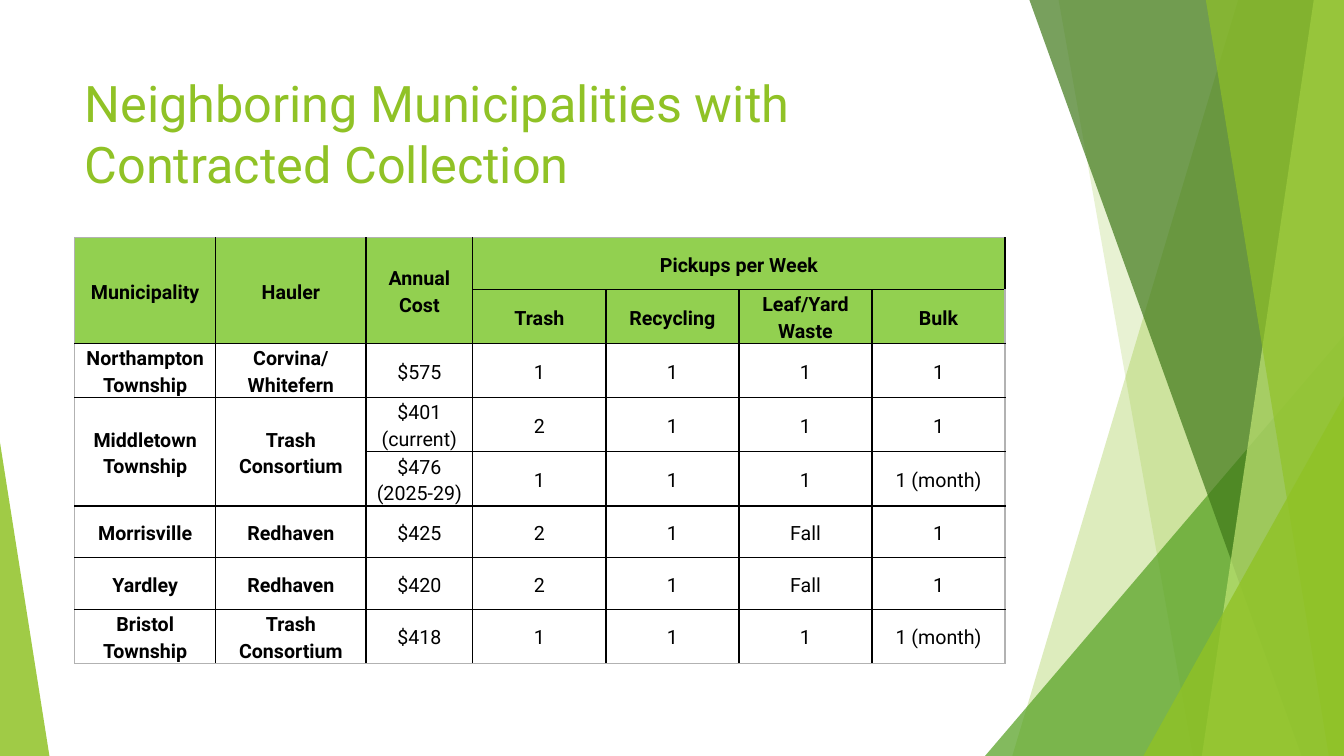
from lxml.etree import SubElement
from pptx import Presentation
from pptx.dml.color import RGBColor
from pptx.enum.shapes import MSO_SHAPE
from pptx.enum.text import MSO_ANCHOR, PP_ALIGN
from pptx.oxml.ns import qn
from pptx.util import Inches, Pt

THEME = {
    "font": "Roboto", "title_size": 36, "table_size": 14,
    "lime": "90C226", "leaf": "54A021", "forest": "3F7819", "pale": "C0E474",
    "header": "92D050", "text": "000000", "rule": "000000", "frame": "B2B2B2",
}

WIDTH, HEIGHT = 13.33, 7.5

# Content
TITLE = "Neighboring Municipalities with Contracted Collection"
HEADER_ROWS = 2
NAME_COLUMNS = 2
COLUMN_WIDTHS = [1.4, 1.49, 1.06] + [1.32] * 4
TABLE_LEFT, TABLE_TOP, TABLE_HEIGHT = 0.74, 2.36, 4.11
# None marks a place covered by a merged cell
ROWS = [
    ["Municipality", "Hauler", "Annual Cost", "Pickups per Week", None, None, None],
    [None, None, None, "Trash", "Recycling", "Leaf/Yard Waste", "Bulk"],
    ["Northampton Township", "Corvina/ Whitefern", "$575", "1", "1", "1", "1"],
    ["Middletown Township", "Trash\nConsortium", "$401\n(current)", "2", "1", "1", "1"],
    [None, None, "$476\n(2025-29)", "1", "1", "1", "1 (month)"],
    ["Morrisville", "Redhaven", "$425", "2", "1", "Fall", "1"],
    ["Yardley", "Redhaven", "$420", "2", "1", "Fall", "1"],
    ["Bristol\nTownship", "Trash Consortium", "$418", "1", "1", "1", "1 (month)"],
]
# First and last (row, column) of each merged cell
MERGES = [((0, 0), (1, 0)), ((0, 1), (1, 1)), ((0, 2), (1, 2)),
          ((0, 3), (0, 6)), ((3, 0), (4, 0)), ((3, 1), (4, 1))]

# Facets from back to front. A band runs from its slanted left edge to the
# right side of the slide; a corner is a right triangle on the bottom edge.
FACETS = [
    {"band": (12.28, 10.04), "color": "lime", "opacity": 30},
    {"band": (10.5, 11.83), "color": "lime", "opacity": 20},
    {"corner": (9.77, 3.33, 3.56), "apex": 1, "color": "leaf", "opacity": 72},
    {"band": (10.21, 12.91), "color": "forest", "opacity": 70},
    {"band": (13.03, 11.92), "color": "pale", "opacity": 70},
    {"band": (11.96, 13.18), "color": "lime", "opacity": 65},
    {"corner": (11.34, 3.93, 1.99), "apex": 1, "color": "lime", "opacity": 80},
    {"corner": (0, 4.39, 0.49), "apex": 0, "color": "lime", "opacity": 85},
]


def rgb(name):
    return RGBColor.from_string(THEME[name])


def write(frame, text, size, color, bold=False, align=PP_ALIGN.LEFT, spacing=1.0):
    frame.word_wrap = True
    for index, line in enumerate(text.split("\n")):
        paragraph = frame.add_paragraph() if index else frame.paragraphs[0]
        paragraph.alignment = align
        paragraph.line_spacing = spacing
        run = paragraph.add_run()
        run.text = line
        run.font.name = THEME["font"]
        run.font.size = Pt(THEME[size])
        run.font.bold = bold
        run.font.color.rgb = rgb(color)


def add_facet(slide, color, opacity, band=None, corner=None, apex=0):
    if band:
        top_x, bottom_x = band
        outline = [(WIDTH, 0), (WIDTH, HEIGHT), (bottom_x, HEIGHT)]
        builder = slide.shapes.build_freeform(Inches(top_x), 0, scale=1.0)
        builder.add_line_segments([(Inches(x), Inches(y)) for x, y in outline])
        facet = builder.convert_to_shape()
    else:
        left, top, width = corner
        facet = slide.shapes.add_shape(
            MSO_SHAPE.ISOSCELES_TRIANGLE, Inches(left), Inches(top),
            Inches(width), Inches(HEIGHT - top))
        facet.adjustments[0] = apex
    facet.shadow.inherit = False
    facet.line.fill.background()
    facet.fill.solid()
    facet.fill.fore_color.rgb = rgb(color)
    tint = facet.fill._xPr.find(".//" + qn("a:srgbClr"))
    SubElement(tint, qn("a:alpha"), val=str(opacity * 1000))


def add_borders(cell, row, column):
    on_frame = {"L": column == 0, "R": column == len(COLUMN_WIDTHS) - 1,
                "T": row == 0, "B": row == len(ROWS) - 1}
    properties = cell._tc.get_or_add_tcPr()
    for side, outer in on_frame.items():
        line = SubElement(properties, qn("a:ln" + side), w=str(Pt(1)))
        fill = SubElement(line, qn("a:solidFill"))
        SubElement(fill, qn("a:srgbClr"), val=THEME["frame" if outer else "rule"])


def add_pickup_table(slide):
    table = slide.shapes.add_table(
        len(ROWS), len(COLUMN_WIDTHS), Inches(TABLE_LEFT), Inches(TABLE_TOP),
        Inches(sum(COLUMN_WIDTHS)), Inches(TABLE_HEIGHT)).table
    table.first_row = table.horz_banding = False
    for column, width in zip(table.columns, COLUMN_WIDTHS):
        column.width = Inches(width)
    for row in table.rows:
        row.height = Inches(TABLE_HEIGHT / len(ROWS))
    for first, last in MERGES:
        table.cell(*first).merge(table.cell(*last))
    for r, row in enumerate(ROWS):
        for c, text in enumerate(row):
            cell = table.cell(r, c)
            is_header = r < HEADER_ROWS
            add_borders(cell, r, c)
            if is_header:
                cell.fill.solid()
                cell.fill.fore_color.rgb = rgb("header")
            else:
                cell.fill.background()
            cell.margin_left = cell.margin_right = Inches(0.07)
            cell.margin_top = cell.margin_bottom = 0
            cell.vertical_anchor = MSO_ANCHOR.MIDDLE
            if text:
                write(cell.text_frame, text, size="table_size", color="text",
                      bold=is_header or c < NAME_COLUMNS,
                      align=PP_ALIGN.CENTER, spacing=1.15)


def main():
    deck = Presentation()
    deck.slide_width, deck.slide_height = Inches(WIDTH), Inches(HEIGHT)
    slide = deck.slides.add_slide(deck.slide_layouts[6])

    # Background facets
    for facet in FACETS:
        add_facet(slide, **facet)

    # Title
    heading = slide.shapes.add_textbox(
        Inches(0.74), Inches(0.67), Inches(9.4), Inches(1.44))
    write(heading.text_frame, TITLE, size="title_size", color="lime")

    # Table
    add_pickup_table(slide)
    deck.save("out.pptx")


if __name__ == "__main__":
    main()
